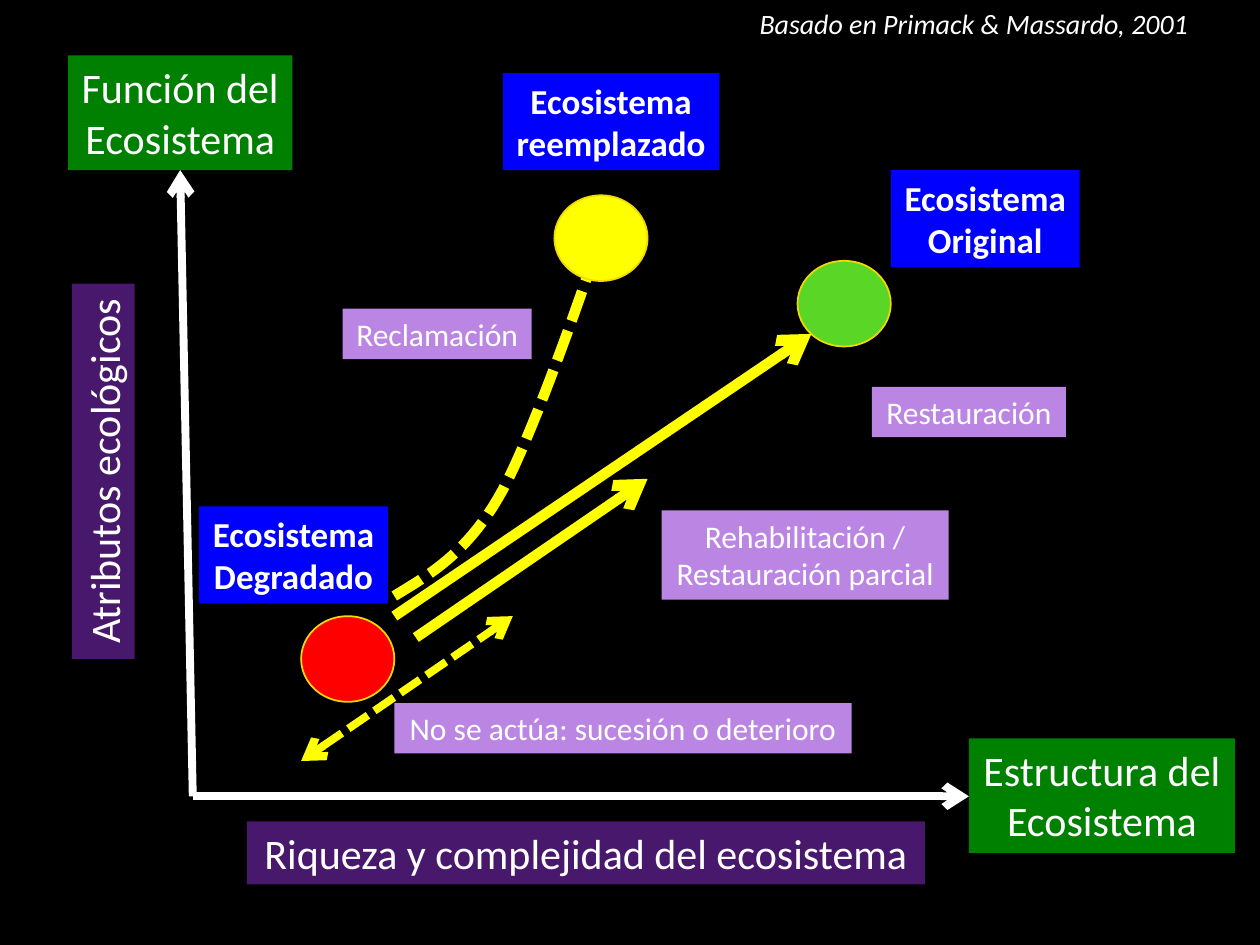
from lxml import etree
from pptx import Presentation
from pptx import util as u
from pptx.dml.color import RGBColor
from pptx.enum import dml, shapes, text
from pptx.oxml.ns import qn

PX = 9144  # EMU per px, at 100 px to the inch
FONT = "Calibri"
COLORS = {
    "background": "000000", "text": "FFFFFF", "axis": "FFFFFF",
    "attribute": "008000", "dimension": "47186B", "state": "0000FF",
    "action": "BB86E3", "route": "FFFF00", "rim": "F2D902",
    "degraded": "FF0000", "original": "5AD626", "replaced": "FFFF00",
}


def color(key):
    return RGBColor.from_string(COLORS[key])


def px(*lengths):
    return [u.Emu(round(length * PX)) for length in lengths]


def add_label(slide, wording, box, size, fill=None, bold=False, italic=False, rotation=0):
    label = slide.shapes.add_textbox(*px(*box))
    label.rotation = rotation
    if fill:
        label.fill.solid()
        label.fill.fore_color.rgb = color(fill)
    frame = label.text_frame
    frame.text = wording
    frame.word_wrap = False
    frame.auto_size = text.MSO_AUTO_SIZE.SHAPE_TO_FIT_TEXT
    for paragraph in frame.paragraphs:
        paragraph.alignment = text.PP_ALIGN.CENTER if fill else text.PP_ALIGN.LEFT
        for run in paragraph.runs:
            run.font.name = FONT
            run.font.size = u.Pt(size)
            run.font.bold = bold
            run.font.italic = italic
            run.font.color.rgb = color("text")


def style_line(line, key, width, dashed=False):
    line.color.rgb = color(key)
    line.width = u.Pt(width)
    if dashed:
        line.dash_style = dml.MSO_LINE.SQUARE_DOT


def add_arrow(slide, start, end, key, width, dashed=False, ends=("tailEnd",)):
    arrow = slide.shapes.add_connector(shapes.MSO_CONNECTOR.STRAIGHT, *px(*start, *end))
    style_line(arrow.line, key, width, dashed)
    outline = arrow.line._get_or_add_ln()
    for end_name in ends:
        etree.SubElement(outline, qn(f"a:{end_name}")).set("type", "arrow")
    etree.SubElement(arrow._element.spPr, qn("a:effectLst"))


def add_ecosystem(slide, left, top, fill):
    circle = slide.shapes.add_shape(shapes.MSO_SHAPE.OVAL, *px(left, top, 74, 68))
    circle.shadow.inherit = False
    circle.fill.solid()
    circle.fill.fore_color.rgb = color(fill)
    style_line(circle.line, "rim", 1)


def bezier(points, steps=20):
    """Return the points along a cubic curve, without its start."""
    curve = []
    for step in range(1, steps + 1):
        t = step / steps
        weights = ((1 - t) ** 3, 3 * t * (1 - t) ** 2, 3 * t * t * (1 - t), t ** 3)
        curve.append(tuple(px(*(sum(w * p[axis] for w, p in zip(weights, points))
                                for axis in (0, 1)))))
    return curve


def add_reclamation_curve(slide):
    start, bend, end = (313, 473), (395, 396), (469, 211)
    builder = slide.shapes.build_freeform(*px(*start))
    builder.add_line_segments(
        bezier((start, (341, 456), (369, 440), bend))
        + bezier((bend, (421, 353), (469, 211), end)), close=False)
    curve = builder.convert_to_shape()
    curve.shadow.inherit = False
    curve.fill.background()
    style_line(curve.line, "route", 6, dashed=True)


def main():
    deck = Presentation()
    deck.slide_width, deck.slide_height = px(1000, 750)
    slide = deck.slides.add_slide(deck.slide_layouts[6])
    slide.background.fill.solid()
    slide.background.fill.fore_color.rgb = color("background")

    origin = (153, 632)
    for axis_end in ((143, 135), (769, 632)):
        add_arrow(slide, origin, axis_end, "axis", 4.5)
    add_label(slide, "Función del\nEcosistema", (54, 44, 178, 91), 24, "attribute")
    add_label(slide, "Estructura del\nEcosistema", (769, 586, 211, 91), 24, "attribute")
    add_label(slide, "Atributos ecológicos", (-67, 349, 298, 50), 24, "dimension", rotation=270)
    add_label(slide, "Riqueza y complejidad del ecosistema", (196, 652, 538, 50), 24, "dimension")
    add_label(slide, "Basado en Primack & Massardo, 2001", (593, 0, 370, 37), 16, italic=True)

    add_ecosystem(slide, 239, 489, "degraded")
    add_ecosystem(slide, 633, 207, "original")
    add_arrow(slide, (313, 489), (644, 265), "route", 6)
    add_arrow(slide, (330, 506), (514, 380), "route", 6)
    add_reclamation_curve(slide)
    add_ecosystem(slide, 440, 155, "replaced")
    add_arrow(slide, (239, 604), (407, 489), "route", 4.5, dashed=True,
              ends=("headEnd", "tailEnd"))

    for state, box in (
        ("Degradado", (158, 402, 150, 77)),
        ("Original", (707, 135, 150, 77)),
        ("reemplazado", (399, 58, 172, 77)),
    ):
        add_label(slide, f"Ecosistema\n{state}", box, 20, "state", bold=True)
    for action, box in (
        ("Restauración", (692, 307, 154, 40)),
        ("Rehabilitación /\nRestauración parcial", (525, 405, 228, 71)),
        ("No se actúa: sucesión o deterioro", (313, 558, 363, 40)),
        ("Reclamación", (272, 245, 150, 40)),
    ):
        add_label(slide, action, box, 18, "action")

    deck.save("out.pptx")


if __name__ == "__main__":
    main()
